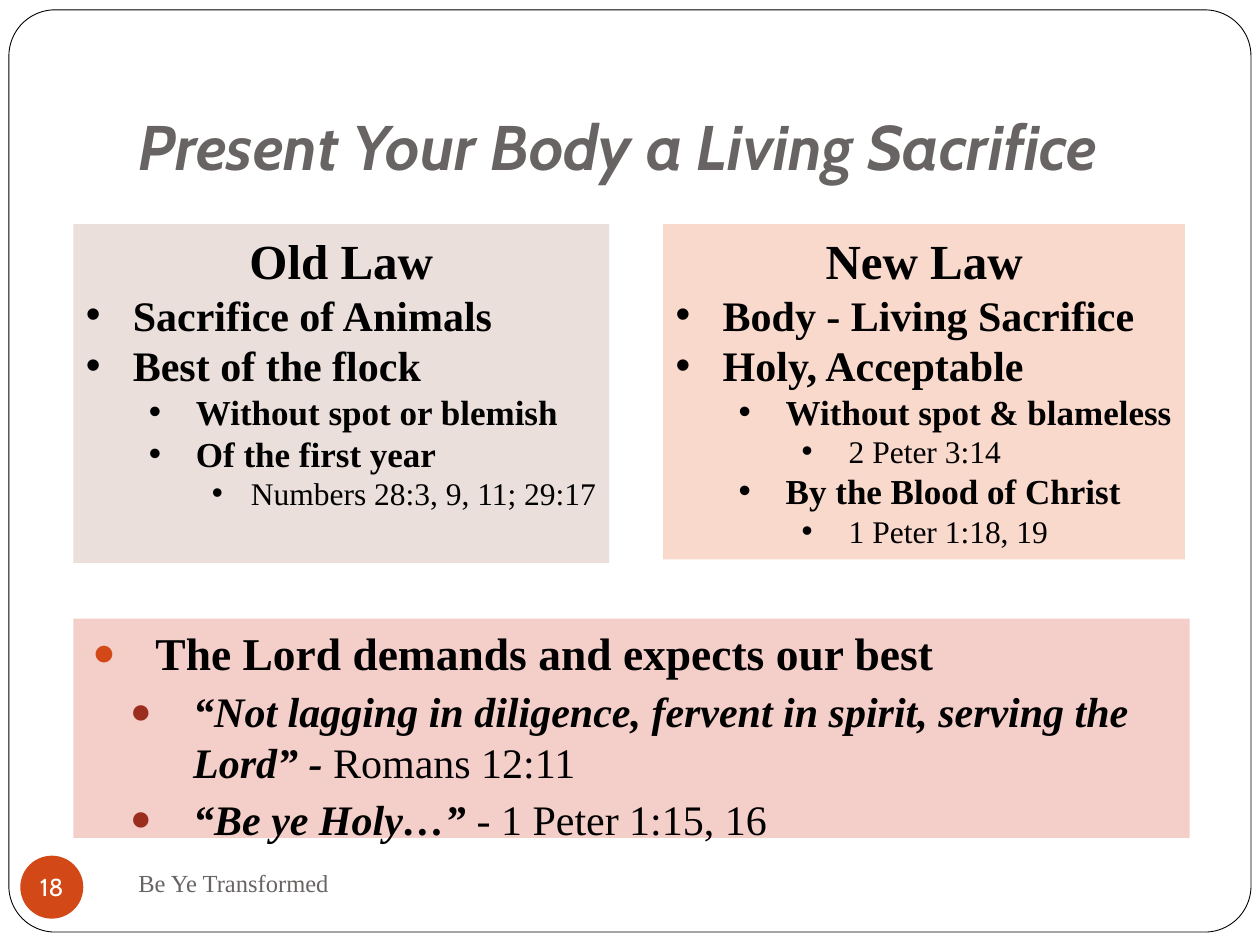
from lxml.etree import SubElement
from pptx import Presentation
from pptx.dml.color import RGBColor
from pptx.enum.shapes import MSO_SHAPE
from pptx.enum.text import MSO_ANCHOR, MSO_AUTO_SIZE, PP_ALIGN
from pptx.oxml.ns import qn
from pptx.util import Cm, Pt

SERIF, SANS = "Times New Roman", "Cabin"
GREY, ORANGE, RED = "696464", "D34817", "9B2D1F"


def color(hex_code):
    return RGBColor.from_string(hex_code)


def place(shape, box):
    shape.left, shape.top, shape.width, shape.height = (Cm(length) for length in box)


def paint(shape, fill, line=None):
    shape.fill.solid()
    shape.fill.fore_color.rgb = color(fill)
    if line:
        shape.line.color.rgb = color(line)
        shape.line.width = Pt(0.5)
    else:
        shape.line.fill.background()


def add_panel(slide, kind, box, fill, line=None):
    shape = slide.shapes.add_shape(kind, *(Cm(length) for length in box))
    shape.shadow.inherit = False
    paint(shape, fill, line)
    return shape


def prepare_frame(shape, anchor=MSO_ANCHOR.TOP, wrap=True):
    frame = shape.text_frame
    frame.word_wrap = wrap
    frame.auto_size = MSO_AUTO_SIZE.NONE
    frame.vertical_anchor = anchor
    return frame


def set_bullet(paragraph, character, indent, hanging, bullet_color, percent):
    properties = paragraph._p.get_or_add_pPr()
    properties.set("marL", str(Cm(indent)))
    properties.set("indent", str(-Cm(hanging)))
    fill = SubElement(properties, qn("a:buClr"))
    SubElement(fill, qn("a:srgbClr"), val=bullet_color)
    SubElement(properties, qn("a:buSzPct"), val=str(percent * 1000))
    SubElement(properties, qn("a:buFont"), typeface="Arial")
    SubElement(properties, qn("a:buChar"), char=character)


def add_run(paragraph, text, size, font=SERIF, fill="000000", bold=False, italic=False):
    run = paragraph.add_run()
    run.text = text
    run.font.size = Pt(size)
    run.font.name = font
    run.font.color.rgb = color(fill)
    run.font.bold = bold
    run.font.italic = italic


def write(frame, text, size, align=PP_ALIGN.LEFT, level=0, before=0, bullet=None,
          plain_tail="", **style):
    """Add one paragraph; plain_tail follows the text without bold or italic."""
    is_first = not frame.paragraphs[0].runs
    paragraph = frame.paragraphs[0] if is_first else frame.add_paragraph()
    paragraph.alignment = align
    paragraph.level = level
    paragraph.space_before = Pt(0 if is_first else before)
    if bullet:
        set_bullet(paragraph, *bullet)
    add_run(paragraph, text, size, **style)
    if plain_tail:
        add_run(paragraph, plain_tail, size)


def add_border(slide, box):
    border = add_panel(slide, MSO_SHAPE.ROUNDED_RECTANGLE, box, "FFFFFF", "000000")
    border.adjustments[0] = 0.05
    border.element.getparent().insert(2, border.element)


def fill_title(slide, box, text):
    title = slide.shapes.title
    place(title, box)
    frame = prepare_frame(title, MSO_ANCHOR.BOTTOM)
    frame.margin_bottom = Cm(0.25)
    write(frame, text, 36, font=SANS, fill=GREY, bold=True, italic=True)


def add_law(slide, box, fill, heading, points, last_indent, last_hanging):
    """points holds (level, text); the deepest level is not bold."""
    frame = prepare_frame(add_panel(slide, MSO_SHAPE.RECTANGLE, box, fill))
    write(frame, heading, 28, align=PP_ALIGN.CENTER, bold=True)
    levels = [(24, 0.95, 0.95), (20, 2.22, 0.95), (18, last_indent, last_hanging)]
    for level, text in points:
        size, indent, hanging = levels[level]
        write(frame, text, size, level=level, bold=level < 2,
              bullet=("•", indent, hanging, "000000", 100))


def fill_conclusion(slide, box, heading, quotes):
    body = slide.placeholders[1]
    place(body, box)
    paint(body, "F4CEC9")
    frame = prepare_frame(body)
    write(frame, heading, 26, bold=True, bullet=("●", 1.4, 1.27, ORANGE, 85))
    for quote, reference in quotes:
        write(frame, quote, 24, level=1, before=3.7, bold=True, italic=True,
              plain_tail=reference, bullet=("●", 2.16, 1.27, RED, 85))


def add_footer(slide, box, text, number):
    left, top, width, height = box
    diameter = 1.27
    label = slide.shapes.add_textbox(Cm(left + 2.13), Cm(top), Cm(width - 2.13), Cm(height))
    write(prepare_frame(label, MSO_ANCHOR.MIDDLE), text, 14, fill=GREY)
    badge = add_panel(slide, MSO_SHAPE.OVAL, (left, top + 0.1, diameter, diameter), ORANGE)
    frame = prepare_frame(badge, MSO_ANCHOR.MIDDLE, wrap=False)
    frame.margin_left = frame.margin_right = frame.margin_top = frame.margin_bottom = 0
    write(frame, number, 14, align=PP_ALIGN.CENTER, font=SANS, fill="FFFFFF")


def main():
    presentation = Presentation()
    presentation.slide_width, presentation.slide_height = Cm(25.4), Cm(19.05)
    slide = presentation.slides.add_slide(presentation.slide_layouts[1])
    add_border(slide, (0.18, 0.2, 25.04, 18.59))
    fill_title(slide, (2.54, 0.76, 21.59, 3.18), "Present Your Body a Living Sacrifice")
    add_footer(slide, (0.41, 17.15, 13.13, 1.27), "Be Ye Transformed", "18")
    add_law(slide, (1.48, 4.52, 10.8, 6.83), "EBDFDB", "Old Law", [
        (0, "Sacrifice of Animals"),
        (0, "Best of the flock"),
        (1, "Without spot or blemish"),
        (1, "Of the first year"),
        (2, "Numbers 28:3, 9, 11; 29:17"),
    ], last_indent=3.33, last_hanging=0.79)
    add_law(slide, (13.37, 4.52, 10.52, 6.76), "FAD9CD", "New Law", [
        (0, "Body - Living Sacrifice"),
        (0, "Holy, Acceptable"),
        (1, "Without spot & blameless"),
        (2, "2 Peter 3:14"),
        (1, "By the Blood of Christ"),
        (2, "1 Peter 1:18, 19"),
    ], last_indent=3.49, last_hanging=0.95)
    fill_conclusion(slide, (1.48, 12.47, 22.5, 4.42), "The Lord demands and expects our best", [
        ("“Not lagging in diligence, fervent in spirit, serving the Lord” - ", "Romans 12:11"),
        ("“Be ye Holy…” ", "- 1 Peter 1:15, 16"),
    ])
    presentation.save("out.pptx")


if __name__ == "__main__":
    main()
